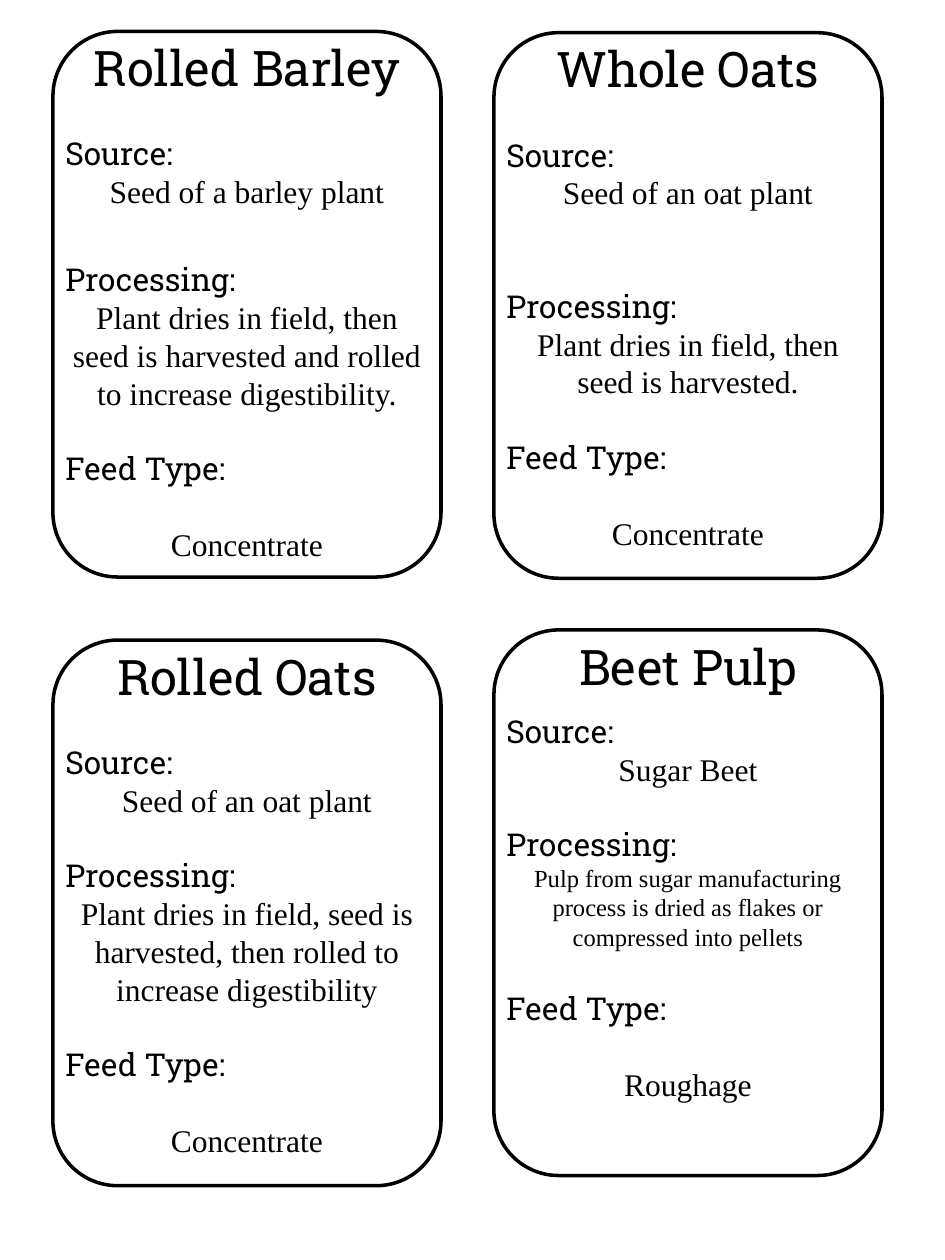
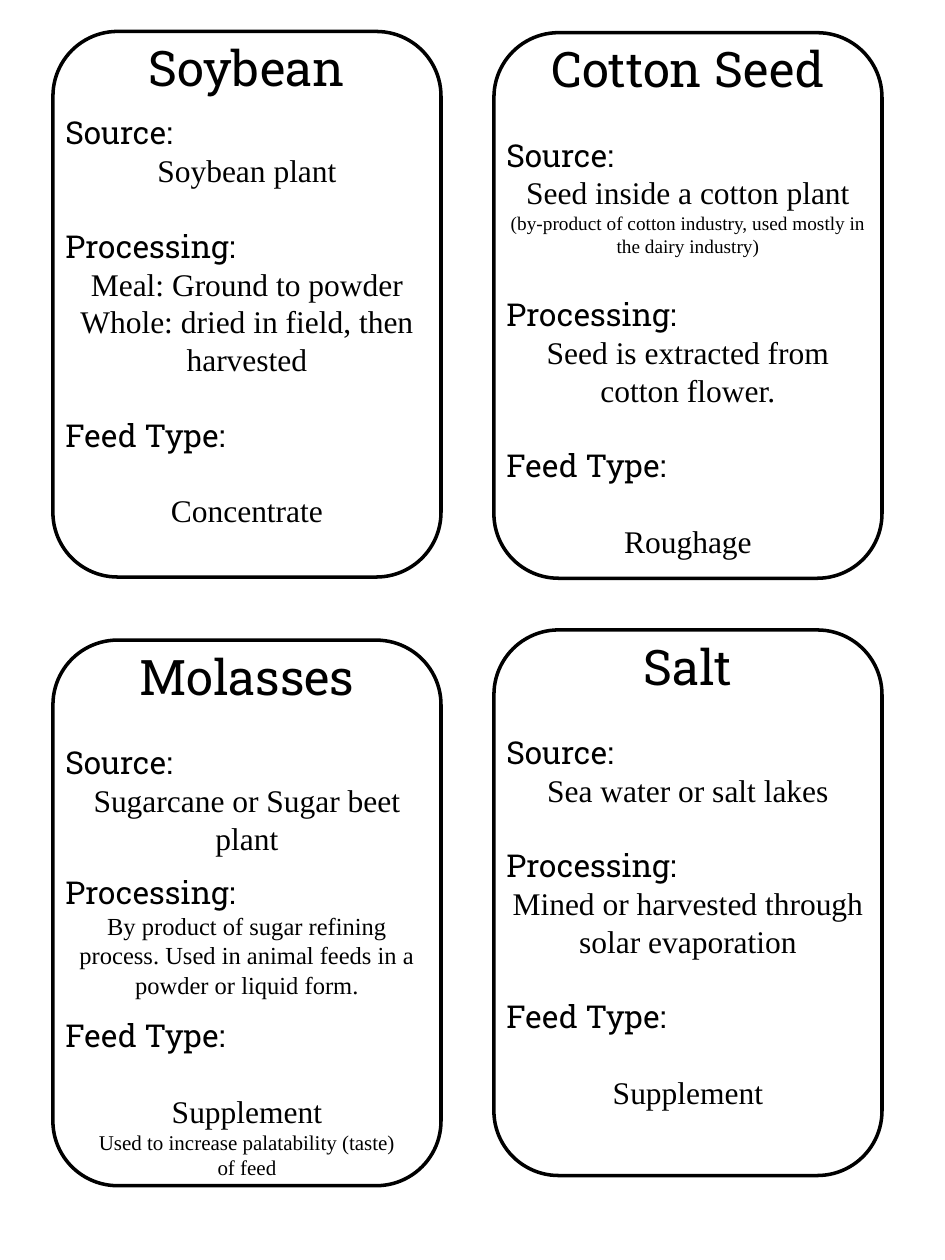
from dataclasses import dataclass

from pptx import Presentation
from pptx.dml.color import RGBColor
from pptx.enum import shapes, text
from pptx.util import Pt

COLORS = {"ink": "000000", "page": "FFFFFF"}
HEADING_FONT = "Roboto Slab"
BODY_FONT = "Times New Roman"
CARD_WIDTH, CARD_HEIGHT = 221.76, 311.76
CARD_CORNERS = [(30.24, 18), (282.24, 18.7), (30.24, 365.8), (282.24, 360)]
LINE_FACTOR = 1.2
REGULAR_GAP = 18 * LINE_FACTOR
SMALL_GAP = 8 * LINE_FACTOR


@dataclass
class Feed:
    name: str
    source: list
    processing: list
    feed_type: list
    text_height: float
    source_gap: float = REGULAR_GAP
    processing_gap: float = REGULAR_GAP
    type_gap: float = REGULAR_GAP


SLIDES = [
    [
        Feed("Rolled Barley", [("Seed of a barley plant", 18)],
             [("Plant dries in field, then seed is harvested and rolled "
               "to increase digestibility.", 18)],
             [("Concentrate", 18)], 332, processing_gap=24 * LINE_FACTOR),
        Feed("Whole Oats", [("Seed of an oat plant", 18)],
             [("Plant dries in field, then seed is harvested.", 18)],
             [("Concentrate", 18)], 325, processing_gap=2 * REGULAR_GAP),
        Feed("Rolled Oats", [("Seed of an oat plant", 18)],
             [("Plant dries in field, seed is harvested, then rolled "
               "to increase digestibility", 18)],
             [("Concentrate", 18)], 325),
        Feed("Beet Pulp", [("Sugar Beet", 18)],
             [("Pulp from sugar manufacturing process is dried as flakes "
               "or compressed into pellets", 14)],
             [("Roughage", 18)], 305, source_gap=SMALL_GAP),
    ],
    [
        Feed("Soybean", [("Soybean plant", 18)],
             [("Meal: Ground to powder", 18),
              ("Whole: dried in field, then harvested", 18)],
             [("Concentrate", 18)], 312.5, source_gap=SMALL_GAP),
        Feed("Cotton Seed",
             [("Seed inside a cotton plant", 18),
              ("(by-product of cotton industry, used mostly in "
               "the dairy industry)", 11)],
             [("Seed is extracted from cotton flower.", 18)],
             [("Roughage", 18)], 330),
        Feed("Molasses", [("Sugarcane or Sugar beet plant", 18)],
             [("By product of sugar refining process. Used in animal feeds "
               "in a powder or liquid form.", 14)],
             [("Supplement", 18),
              ("Used to increase palatability (taste)", 12), ("of feed", 12)],
             337, processing_gap=SMALL_GAP, type_gap=SMALL_GAP),
        Feed("Salt", [("Sea water or salt lakes", 18)],
             [("Mined or harvested through solar evaporation", 18)],
             [("Supplement", 18)], 303),
    ],
]


def rgb(name):
    return RGBColor.from_string(COLORS[name])


def write(paragraph, words, size=18, font=BODY_FONT,
          align=text.PP_ALIGN.CENTER, before=0):
    paragraph.alignment = align
    paragraph.space_before = Pt(before)
    run = paragraph.add_run()
    run.text = words
    run.font.size = Pt(size)
    run.font.name = font
    run.font.color.rgb = rgb("ink")


def add_border(slide, left, top):
    border = slide.shapes.add_shape(
        shapes.MSO_SHAPE.ROUNDED_RECTANGLE,
        Pt(left), Pt(top), Pt(CARD_WIDTH), Pt(CARD_HEIGHT))
    border.shadow.inherit = False
    border.fill.background()
    border.line.color.rgb = rgb("ink")
    border.line.width = Pt(2)


def add_facts(slide, feed, left, top):
    facts = slide.shapes.add_textbox(
        Pt(left), Pt(top), Pt(CARD_WIDTH), Pt(feed.text_height)).text_frame
    facts.word_wrap = True
    facts.auto_size = text.MSO_AUTO_SIZE.SHAPE_TO_FIT_TEXT
    write(facts.paragraphs[0], feed.name, size=28, font=HEADING_FONT)
    sections = [
        ("Source:", feed.source_gap, feed.source, 0),
        ("Processing:", feed.processing_gap, feed.processing, 0),
        ("Feed Type:", feed.type_gap, feed.feed_type, REGULAR_GAP),
    ]
    for label, label_gap, answers, answer_gap in sections:
        write(facts.add_paragraph(), label, font=HEADING_FONT,
              align=text.PP_ALIGN.LEFT, before=label_gap)
        for index, (answer, size) in enumerate(answers):
            write(facts.add_paragraph(), answer, size=size,
                  before=0 if index else answer_gap)


def add_feed_slide(deck, feeds):
    slide = deck.slides.add_slide(deck.slide_layouts[6])
    slide.background.fill.solid()
    slide.background.fill.fore_color.rgb = rgb("page")
    for feed, (left, top) in zip(feeds, CARD_CORNERS):
        add_border(slide, left, top)
        add_facts(slide, feed, left, top)


def main():
    deck = Presentation()
    deck.slide_width, deck.slide_height = Pt(540), Pt(720)
    for feeds in SLIDES:
        add_feed_slide(deck, feeds)
    deck.save("out.pptx")


if __name__ == "__main__":
    main()
